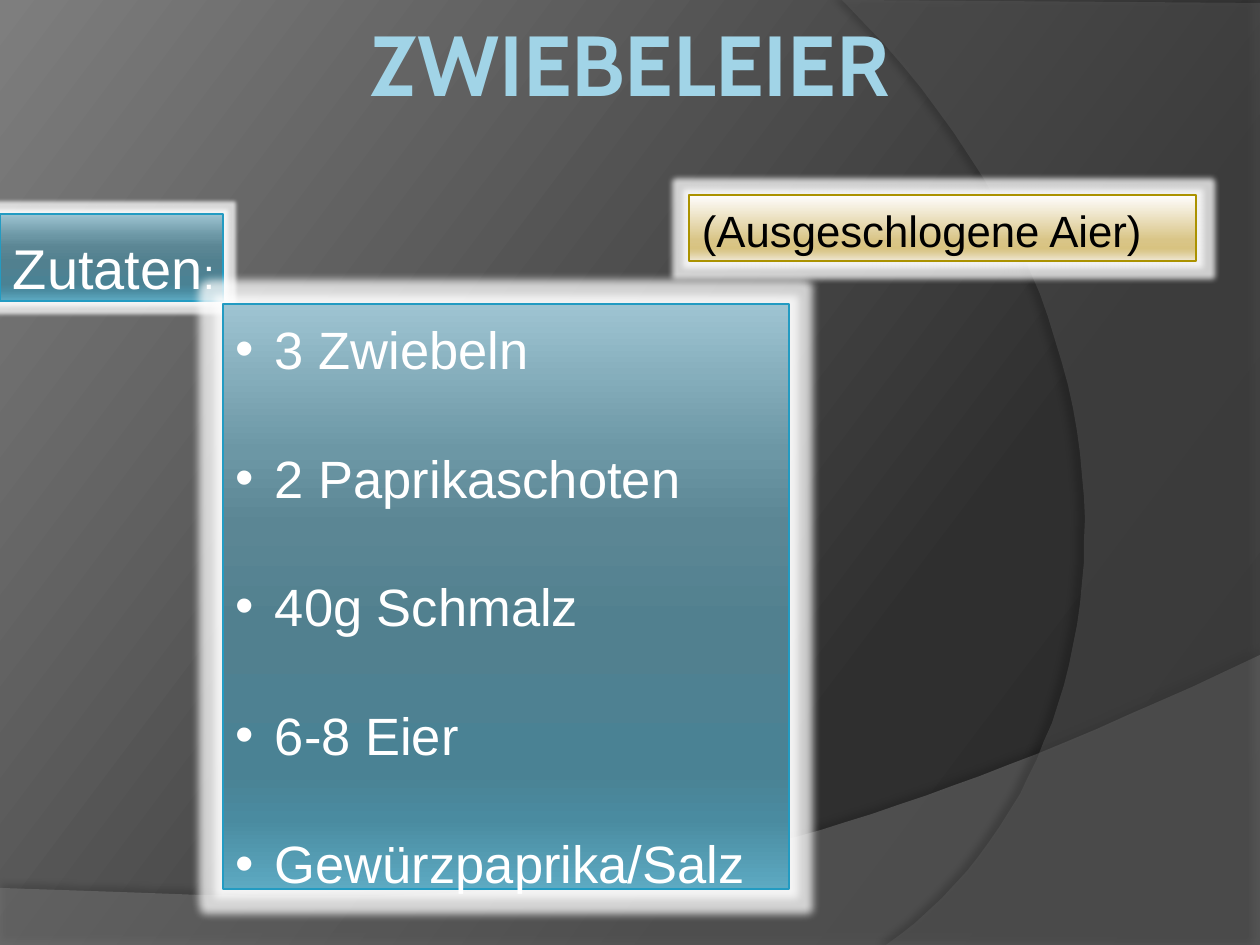
from lxml.etree import SubElement
from pptx import Presentation
from pptx.dml.color import RGBColor
from pptx.enum.shapes import MSO_SHAPE
from pptx.enum.text import MSO_ANCHOR, PP_ALIGN
from pptx.oxml import parse_xml
from pptx.oxml.ns import nsdecls, qn
from pptx.util import Emu, Pt

PX = 914400 / 126
WIDTH, HEIGHT = 1260, 945

TITLE = "ZWIEBELEIER"
HEADING = [("Zutaten", 32), (":", 24)]
INGREDIENTS = ["3 Zwiebeln", "2 Paprikaschoten", "40g Schmalz", "6-8 Eier", "Gewürzpaprika/Salz"]
REMARK = "(Ausgeschlogene Aier)"

BACKDROP = [(0, "282828"), (30, "2F2F2F"), (100, "7E7E7E")]
TITLE_BLUE = [(0, "A1D4E7"), (9, "A1D4E7"), (53, "58808D"), (90, "A1D4E7"), (100, "A1D4E7")]
BLUE = [(0, "9EC4D2"), (25, "6C97A5"), (38, "5B8694"), (55, "51808F"),
        (80, "4A8294"), (88, "4A8BA0"), (100, "5DAAC2")]
GOLD = [(0, "FFFEFE"), (68, "D9C587"), (81, "D8C381"), (86, "DBC990"), (100, "EFE7D3")]

# Corners, then the two control points and the end of the closing curve
WAVE = ([(0, 888), (0, 945), (1260, 945), (1260, 655)], [(704, 919), (493, 906), (0, 888)])
ARC = ([(1260, 3), (1260, 945), (886, 945)], [(1123, 780), (1193, 347), (842, 0)])


def px(value):
    return Emu(round(value * PX))


def color(value):
    return RGBColor.from_string(value)


def gradient(stops, angle=90):
    marks = "".join(f'<a:gs pos="{at * 1000}"><a:srgbClr val="{value}"/></a:gs>'
                    for at, value in stops)
    return parse_xml(f'<a:gradFill {nsdecls("a")} rotWithShape="1"><a:gsLst>{marks}</a:gsLst>'
                     f'<a:lin ang="{angle * 60000}" scaled="0"/></a:gradFill>')


def swap_fill(parent, fill):
    parent.replace(parent.find(qn("a:solidFill")), fill)


def add_effect(shape, tag, value, alpha, **attributes):
    shape.shadow.inherit = False
    effects = shape._element.spPr.find(qn("a:effectLst"))
    effect = SubElement(effects, qn(tag), {key: str(item) for key, item in attributes.items()})
    tint = SubElement(effect, qn("a:srgbClr"), val=value)
    SubElement(tint, qn("a:alpha"), val=str(alpha * 1000))


def curve_points(start, first, second, end, steps=48):
    """Points along a cubic Bezier curve, without its start."""
    for step in range(1, steps + 1):
        t = step / steps
        weights = ((1 - t) ** 3, 3 * t * (1 - t) ** 2, 3 * t * t * (1 - t), t ** 3)
        yield tuple(sum(weight * point[axis] for weight, point
                        in zip(weights, (start, first, second, end))) for axis in (0, 1))


def add_swoosh(page, outline, fill, alpha, shadow_alpha, distance, direction):
    corners, curve = outline
    points = corners + list(curve_points(corners[-1], *curve))
    builder = page.shapes.build_freeform(*points[0], scale=PX)
    builder.add_line_segments(points[1:], close=True)
    shape = builder.convert_to_shape()
    shape.fill.solid()
    shape.fill.fore_color.rgb = color(fill)
    tint = shape._element.spPr.find(qn("a:solidFill"))[0]
    SubElement(tint, qn("a:alpha"), val=str(alpha * 1000))
    shape.line.fill.background()
    add_effect(shape, "a:outerShdw", "000000", shadow_alpha, blurRad=Pt(4),
               dist=Pt(distance), dir=direction * 60000, algn="ctr", rotWithShape=0)


def set_frame(shape, left, top, right, bottom, anchor=MSO_ANCHOR.TOP):
    frame = shape.text_frame
    frame.word_wrap = True
    frame.vertical_anchor = anchor
    frame.margin_left, frame.margin_top = px(left), px(top)
    frame.margin_right, frame.margin_bottom = px(right), px(bottom)
    return frame


def add_panel(page, area, stops, edge, glow):
    panel = page.shapes.add_shape(MSO_SHAPE.RECTANGLE, *map(px, area))
    panel.fill.solid()
    swap_fill(panel._element.spPr, gradient(stops))
    panel.line.color.rgb = color(edge)
    panel.line.width = Pt(0.75)
    add_effect(panel, "a:glow", "FFFFFF", 75, rad=px(glow))
    return panel


def add_span(paragraph, text, size, value):
    paragraph.alignment = PP_ALIGN.LEFT
    span = paragraph.add_run()
    span.text = text
    span.font.size, span.font.name = Pt(size), "Arial"
    span.font.color.rgb = color(value)


def add_bullet(paragraph, indent):
    properties = paragraph._p.get_or_add_pPr()
    properties.set("marL", str(indent))
    properties.set("indent", str(-indent))
    SubElement(properties, qn("a:buFont"), typeface="Arial")
    SubElement(properties, qn("a:buChar"), char="•")


def add_title(page):
    box = page.shapes.add_textbox(px(0), px(5), px(WIDTH), px(100))
    paragraph = set_frame(box, 6, 6, 6, 6).paragraphs[0]
    paragraph.text = TITLE
    paragraph.alignment = PP_ALIGN.CENTER
    span = paragraph.runs[0]
    span.font.size, span.font.name, span.font.bold = Pt(48.6), "Cabin", True
    span.font.color.rgb = color("A1D4E7")
    properties = span._r.get_or_add_rPr()
    swap_fill(properties, gradient(TITLE_BLUE))
    properties.insert(0, parse_xml(
        f'<a:ln {nsdecls("a")} w="{Pt(0.39)}"><a:solidFill><a:srgbClr val="5DD4FF"/>'
        '</a:solidFill></a:ln>'))


def main():
    deck = Presentation()
    deck.slide_width, deck.slide_height = px(WIDTH), px(HEIGHT)
    page = deck.slides.add_slide(deck.slide_layouts[6])
    page.background.fill.solid()
    swap_fill(page._element.cSld.find(qn("p:bg"))[0], gradient(BACKDROP, 217))

    add_swoosh(page, WAVE, "7F7F7F", 45, 35, 3.5, 270)
    add_swoosh(page, ARC, "5E5E5E", 40, 45, 4, 180)
    add_title(page)

    heading = add_panel(page, (0, 214, 223, 87), BLUE, "239BC2", 8)
    paragraph = set_frame(heading, 13, 0, 6, 0, MSO_ANCHOR.BOTTOM).paragraphs[0]
    for text, size in HEADING:
        add_span(paragraph, text, size, "FFFFFF")

    ingredients = add_panel(page, (223, 304, 566, 585), BLUE, "239BC2", 16)
    frame = set_frame(ingredients, 13, 13, 13, 6)
    for index, text in enumerate(INGREDIENTS):
        paragraph = frame.add_paragraph() if index else frame.paragraphs[0]
        if index:
            paragraph.space_before = Pt(37.5)
        add_bullet(paragraph, px(39))
        add_span(paragraph, text, 30, "FFFFFF")

    remark = add_panel(page, (689, 195, 507, 66), GOLD, "AB9200", 12)
    add_span(set_frame(remark, 13, 9, 13, 6).paragraphs[0], REMARK, 25, "000000")

    deck.save("out.pptx")


if __name__ == "__main__":
    main()
